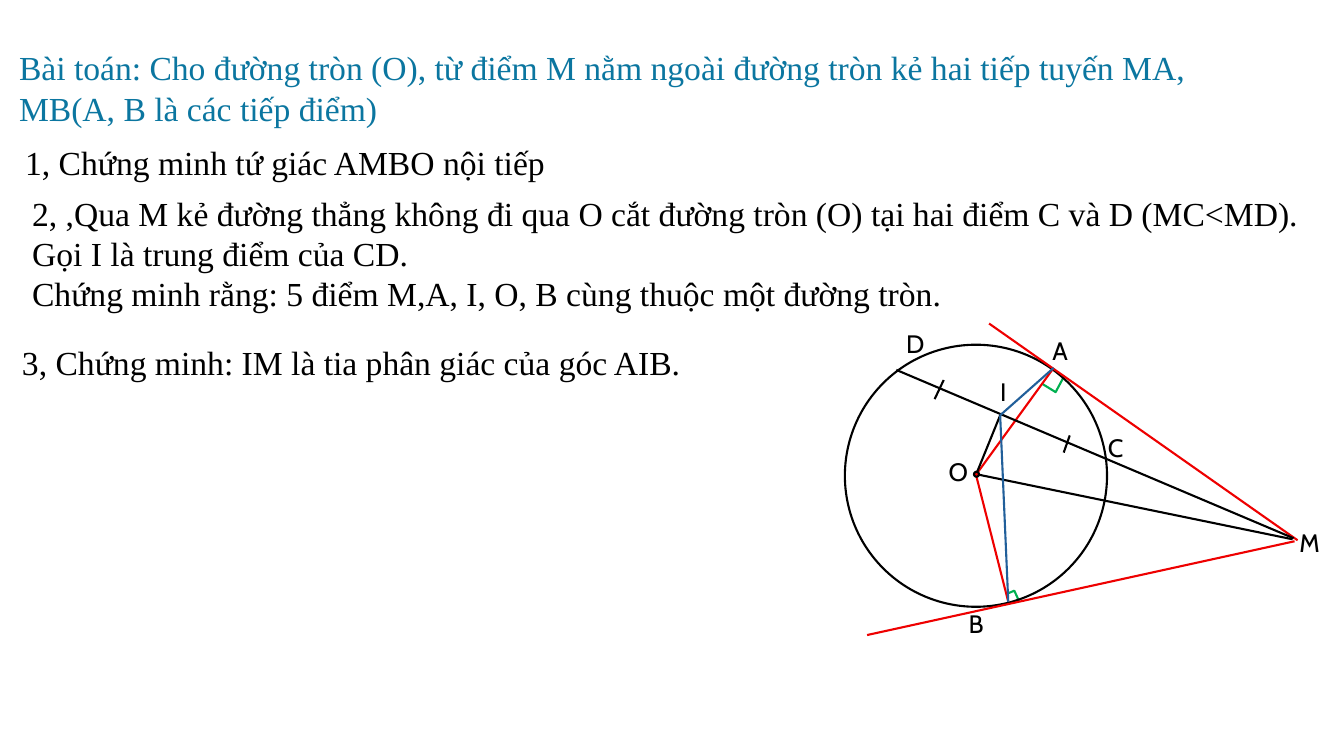
from pptx import Presentation
from pptx.dml.color import RGBColor
from pptx.enum.shapes import MSO_CONNECTOR as Connector, MSO_SHAPE as Shape
from pptx.enum.text import MSO_AUTO_SIZE as AutoSize
from pptx.oxml.ns import qn
from pptx.util import Pt
from lxml.etree import SubElement

PX = 9144
BLACK, RED, BLUE, GREEN, TEAL = "000000", "EE0000", "215F9A", "00B050", "0B76A0"
A, B, D, I, O = (1045, 365), (1000, 597), (889, 367), (992, 412), (968, 471)

STATEMENTS = [
    ((9, 42, 1211, 91), TEAL, True, [
        "Bài toán: Cho đường tròn (O), từ điểm M nằm ngoài đường tròn kẻ hai tiếp tuyến MA, "
        "MB(A, B là các tiếp điểm)"]),
    ((15, 136, 539, 50), BLACK, False, ["1, Chứng minh tứ giác AMBO nội tiếp"]),
    ((22, 186, 1303, 131), BLACK, True, [
        "2, ,Qua M kẻ đường thẳng không đi qua O cắt đường tròn (O) tại hai điểm C và D (MC<MD). "
        "Gọi I là trung điểm của CD.",
        "Chứng minh rằng: 5 điểm M,A, I, O, B cùng thuộc một đường tròn."]),
    ((12, 334, 766, 50), BLACK, True, ["3, Chứng minh: IM là tia phân giác của góc AIB."]),
]
RIGHT_ANGLES = [
    [(999, 589), (1006, 586), (1011, 597)],
    [(1034, 381), (1047, 389), (1055, 374)],
]
SEGMENTS = [
    (O, A, RED), (O, B, RED),
    ((860, 630), (1284, 537), RED),
    ((981, 321), (1287, 536), RED),
    (D, (1283, 534), BLACK),
    ((936, 377), (927, 396), BLACK),
    ((1061, 432), (1055, 449), BLACK),
    (I, O, BLACK),
    ((971, 471), (1282, 535), BLACK),
    (I, A, BLUE),
    (B, I, BLUE),
]
POINT_LABELS = {
    "O": (931, 448), "A": (1034, 328), "B": (951, 599), "M": (1279, 518),
    "C": (1089, 424), "D": (889, 321), "I": (982, 368),
}


def emu(*lengths):
    """Turn px lengths into EMU."""
    return [length * PX for length in lengths]


def color(value):
    """Turn a hex string into a colour."""
    return RGBColor.from_string(value)


def style_line(line, value):
    """Give an outline its colour and width."""
    line.color.rgb = color(value)
    line.width = Pt(1.5)


def add_text(slide, box, paragraphs, name, size, value, wrap=True):
    """Add a text box with one paragraph per string."""
    frame = slide.shapes.add_textbox(*emu(*box)).text_frame
    frame_format = {"word_wrap": wrap, "auto_size": AutoSize.SHAPE_TO_FIT_TEXT}
    for key, setting in frame_format.items():
        setattr(frame, key, setting)
    frame.text = "\n".join(paragraphs)
    for paragraph in frame.paragraphs:
        font = paragraph.runs[0].font
        for key, setting in {"name": name, "size": Pt(size)}.items():
            setattr(font, key, setting)
        font.color.rgb = color(value)


def add_segment(slide, start, end, value):
    """Draw a straight segment between two points."""
    connector = slide.shapes.add_connector(Connector.STRAIGHT, *emu(*start, *end))
    style_line(connector.line, value)
    SubElement(connector._element.spPr, qn("a:effectLst"))


def add_circle(slide, left, top, diameter, fill=None):
    """Draw a circle with a black outline."""
    shape = slide.shapes.add_shape(Shape.OVAL, *emu(left, top, diameter, diameter))
    shape.shadow.inherit = False
    style_line(shape.line, BLACK)
    if fill:
        shape.fill.solid()
        shape.fill.fore_color.rgb = color(fill)
    else:
        shape.fill.background()


def add_right_angle(slide, points):
    """Draw an open right-angle mark."""
    builder = slide.shapes.build_freeform(*points[0], scale=PX)
    builder.add_line_segments(points[1:], close=False)
    shape = builder.convert_to_shape()
    shape.shadow.inherit = False
    shape.fill.background()
    style_line(shape.line, GREEN)


def main():
    """Build the geometry problem slide."""
    presentation = Presentation()
    presentation.slide_width, presentation.slide_height = emu(1333, 750)
    slide = presentation.slides.add_slide(presentation.slide_layouts[6])
    for points in RIGHT_ANGLES:
        add_right_angle(slide, points)
    add_circle(slide, 838, 342, 260)
    for start, end, value in SEGMENTS:
        add_segment(slide, start, end, value)
    add_circle(slide, 966, 468, 5, RED)
    for label, (left, top) in POINT_LABELS.items():
        add_text(slide, (left, top, 37, 40), [label], "Cabin", 18, BLACK)
    for box, value, wrap, paragraphs in STATEMENTS:
        add_text(slide, box, paragraphs, "Times New Roman", 24, value, wrap)
    presentation.save("out.pptx")


if __name__ == "__main__":
    main()
